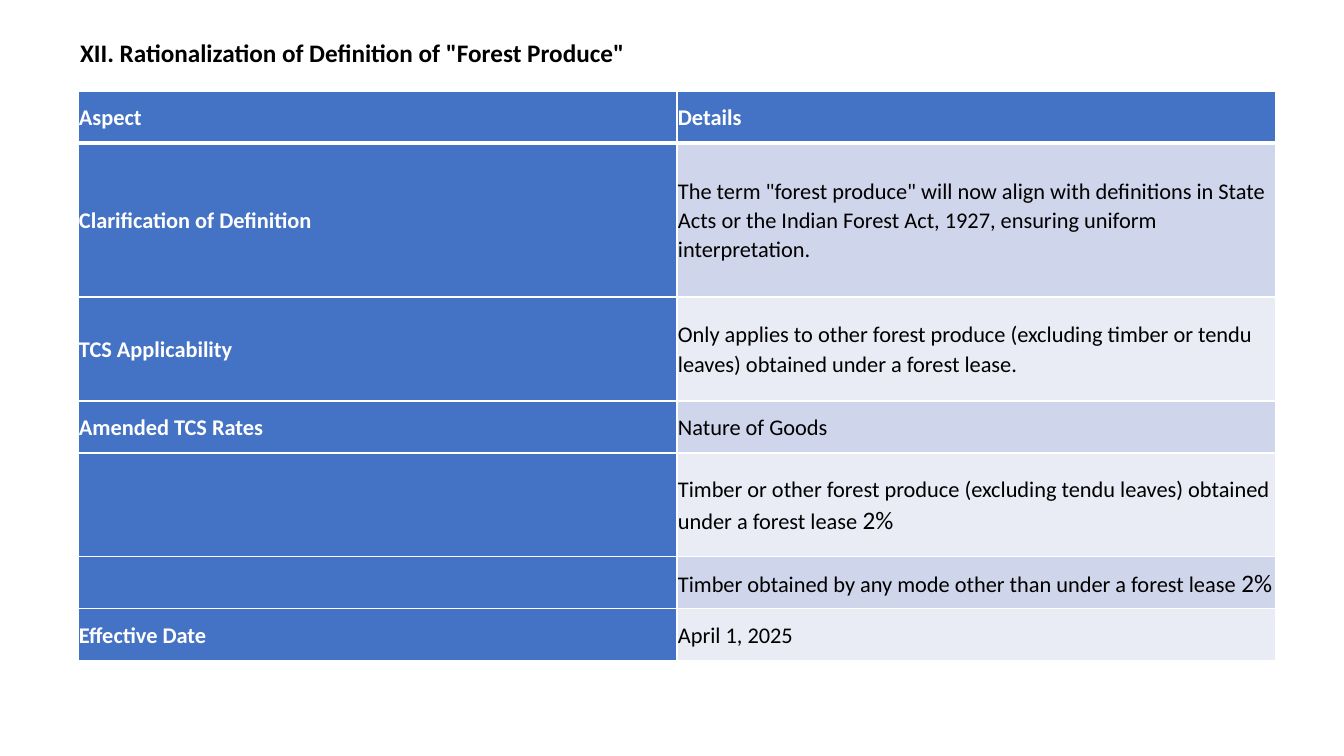
import pptx
import pptx.util
import pptx.dml.color
import pptx.enum.text
import pptx.oxml
import pptx.oxml.ns

RGBColor = pptx.dml.color.RGBColor
WHITE = RGBColor(0xFF, 0xFF, 0xFF)
BLACK = RGBColor(0x00, 0x00, 0x00)
BLUE = RGBColor(0x44, 0x72, 0xC4)
BAND_DARK = RGBColor(0xCF, 0xD5, 0xEA)
BAND_LIGHT = RGBColor(0xE9, 0xEB, 0xF5)

PX = 914400 / 100.8
LINE = 52

HEADING = 'XII. Rationalization of Definition of "Forest Produce"'
HEADER = ("Aspect", "Details")
PROVISIONS = [
    (154, "Clarification of Definition",
     'The term "forest produce" will now align with definitions in State Acts '
     "or the Indian Forest Act, 1927, ensuring uniform interpretation.", ""),
    (2 * LINE, "TCS Applicability",
     "Only applies to other forest produce (excluding timber or tendu leaves) "
     "obtained under a forest lease.", ""),
    (LINE, "Amended TCS Rates", "Nature of Goods", ""),
    (2 * LINE, "",
     "Timber or other forest produce (excluding tendu leaves) obtained under a forest lease ", "2%"),
    (LINE, "", "Timber obtained by any mode other than under a forest lease ", "2%"),
    (LINE, "Effective Date", "April 1, 2025", ""),
]


def px(length):
    return pptx.util.Emu(round(length * PX))


def apply_format(target, values):
    for name, value in values.items():
        setattr(target, name, value)


class SlideBuilder:
    font = "Calibri"
    body_size = 16
    large_size = 18
    paragraph_format = {"line_spacing": 1.07, "space_after": pptx.util.Pt(8),
                        "alignment": pptx.enum.text.PP_ALIGN.LEFT}
    cell_format = {"margin_left": px(1), "margin_right": px(1),
                   "margin_top": px(1), "margin_bottom": px(1),
                   "vertical_anchor": pptx.enum.text.MSO_ANCHOR.MIDDLE}
    title_format = {"margin_left": px(10), "margin_right": px(10),
                    "margin_top": px(5), "margin_bottom": px(5),
                    "word_wrap": True,
                    "vertical_anchor": pptx.enum.text.MSO_ANCHOR.TOP,
                    "auto_size": pptx.enum.text.MSO_AUTO_SIZE.SHAPE_TO_FIT_TEXT}

    def __init__(self, presentation):
        self.slide = presentation.slides.add_slide(presentation.slide_layouts[5])

    def wording(self, frame, runs, color, bold):
        paragraph = frame.paragraphs[0]
        apply_format(paragraph, self.paragraph_format)
        for phrase, size in runs:
            if not phrase:
                continue
            run = paragraph.add_run()
            run.text = phrase
            apply_format(run.font, {"name": self.font, "size": pptx.util.Pt(size), "bold": bold})
            run.font.color.rgb = color

    def title(self, phrase, left, top, width, height):
        heading = self.slide.shapes.title
        apply_format(heading, {"left": px(left), "top": px(top),
                               "width": px(width), "height": px(height)})
        apply_format(heading.text_frame, self.title_format)
        self.wording(heading.text_frame, [(phrase, self.large_size)], BLACK, True)

    def borders(self, cell, widths):
        properties = cell._tc.get_or_add_tcPr()
        for position, (side, width) in enumerate(widths.items()):
            properties.insert(position, pptx.oxml.parse_xml(
                f'<a:ln{side} {pptx.oxml.ns.nsdecls("a")} w="{pptx.util.Pt(width)}">'
                f'<a:solidFill><a:srgbClr val="{WHITE}"/></a:solidFill></a:ln{side}>'))

    def cell(self, cell, runs, fill, color, bold, widths):
        apply_format(cell, self.cell_format)
        cell.fill.solid()
        cell.fill.fore_color.rgb = fill
        self.borders(cell, widths)
        self.wording(cell.text_frame, runs, color, bold)

    def table(self, header, provisions, left, top, width):
        heights = [LINE] + [provision[0] for provision in provisions]
        grid = self.slide.shapes.add_table(
            len(heights), len(header), px(left), px(top), px(width), px(sum(heights))).table
        grid.horz_banding = False
        for column in grid.columns:
            column.width = px(width / len(header))
        for row, height in zip(grid.rows, heights):
            row.height = px(height)

        header_borders = {"L": 1, "R": 1, "T": 1, "B": 3}
        for index, label in enumerate(header):
            self.cell(grid.cell(0, index), [(label, self.body_size)],
                      BLUE, WHITE, True, header_borders)
        for index, (_, aspect, details, rate) in enumerate(provisions, 1):
            row_borders = {"L": 1, "R": 1, "T": 3 if index == 1 else 1, "B": 1}
            self.cell(grid.cell(index, 0), [(aspect, self.body_size)],
                      BLUE, WHITE, True, row_borders)
            self.cell(grid.cell(index, 1),
                      [(details, self.body_size), (rate, self.large_size)],
                      BAND_DARK if index % 2 else BAND_LIGHT, BLACK, False, row_borders)


def main():
    presentation = pptx.Presentation()
    apply_format(presentation, {"slide_width": px(1344), "slide_height": px(756)})
    builder = SlideBuilder(presentation)
    builder.title(HEADING, 70, 30, 672, 41)
    builder.table(HEADER, PROVISIONS, 78, 91, 1198)
    presentation.save("out.pptx")


if __name__ == "__main__":
    main()
